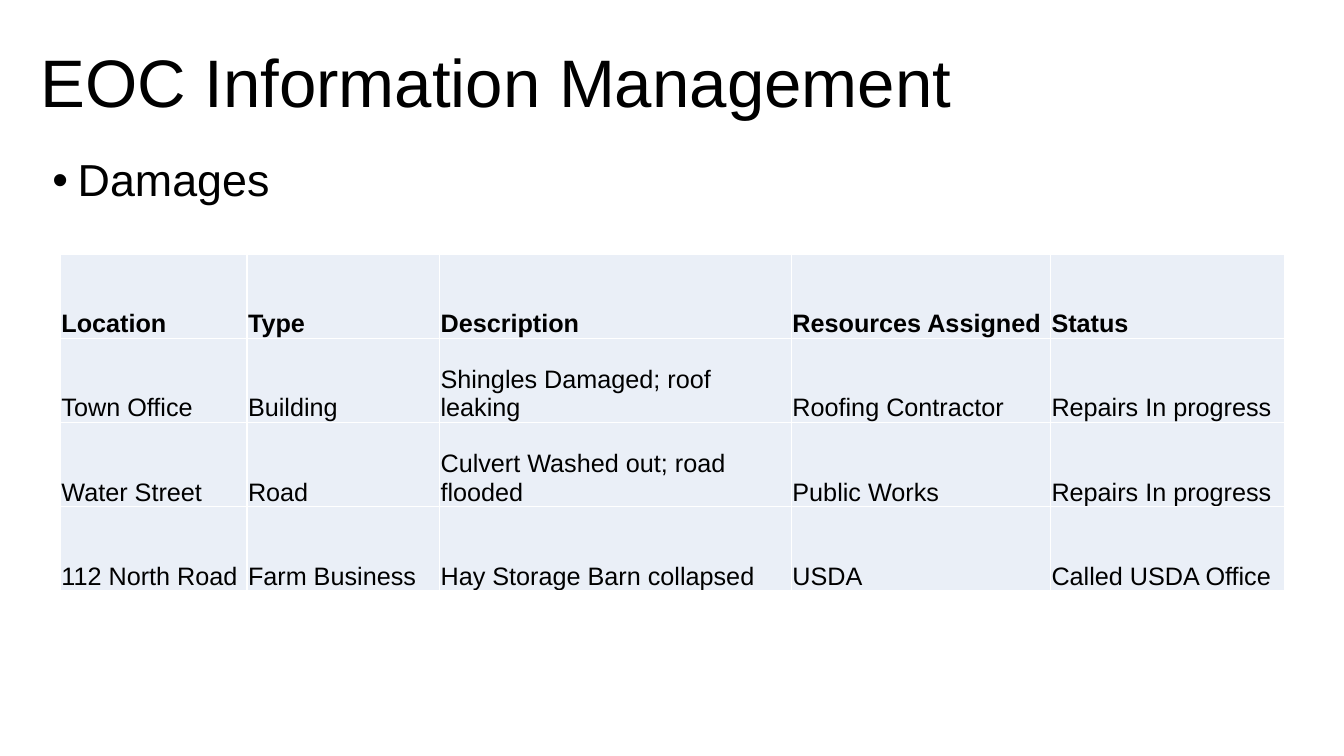
from lxml import etree
from pptx import Presentation
from pptx import util as u
from pptx.dml.color import RGBColor
from pptx.enum import text
from pptx.oxml import ns

WIDTH, HEIGHT = u.Inches(13.33), u.Inches(7.5)
FONT = "Arial"
BLACK = RGBColor(0x00, 0x00, 0x00)
WHITE = RGBColor(0xFF, 0xFF, 0xFF)
PALE_BLUE = RGBColor(0xEA, 0xEF, 0xF7)

COLUMNS = [1.85, 1.91, 3.49, 2.57, 2.32]
ROW_HEIGHT = 0.835
DAMAGES = [
    ["Location", "Type", "Description", "Resources Assigned", "Status"],
    ["Town Office", "Building", "Shingles Damaged; roof leaking",
     "Roofing Contractor", "Repairs In progress"],
    ["Water Street", "Road", "Culvert Washed out; road flooded",
     "Public Works", "Repairs In progress"],
    ["112 North Road", "Farm Business", "Hay Storage Barn collapsed",
     "USDA", "Called USDA Office"],
]


def add_run(p, words, size, bold=False):
    p.alignment = text.PP_ALIGN.LEFT
    r = p.add_run()
    r.text = words
    r.font.name, r.font.size, r.font.bold = FONT, u.Pt(size), bold
    r.font.color.rgb = BLACK


def fill_placeholder(sp, box, words, size, anchor):
    sp.left, sp.top, sp.width, sp.height = (u.Inches(n) for n in box)
    tf = sp.text_frame
    tf.word_wrap = True
    tf.auto_size = text.MSO_AUTO_SIZE.NONE
    tf.vertical_anchor = anchor
    p = tf.paragraphs[0]
    p.line_spacing, p.space_before = 0.9, u.Pt(0)
    add_run(p, words, size)
    return p


def add_bullet(p, indent):
    pPr = p._p.get_or_add_pPr()
    pPr.set("marL", str(u.Inches(indent)))
    pPr.set("indent", str(-u.Inches(indent)))
    etree.SubElement(pPr, ns.qn("a:buFont")).set("typeface", FONT)
    etree.SubElement(pPr, ns.qn("a:buChar")).set("char", "•")


def add_borders(cell, color, width):
    tcPr = cell._tc.get_or_add_tcPr()
    for i, side in enumerate(("a:lnL", "a:lnR", "a:lnT", "a:lnB")):
        ln = etree.Element(ns.qn(side), w=str(u.Pt(width)))
        fill = etree.SubElement(ln, ns.qn("a:solidFill"))
        etree.SubElement(fill, ns.qn("a:srgbClr")).set("val", str(color))
        tcPr.insert(i, ln)  # borders come before the cell fill


def format_cell(cell, words, bold):
    cell.fill.solid()
    cell.fill.fore_color.rgb = PALE_BLUE
    cell.vertical_anchor = text.MSO_ANCHOR.BOTTOM
    cell.margin_left = cell.margin_right = cell.margin_top = u.Inches(0.01)
    cell.margin_bottom = 0
    add_run(cell.text_frame.paragraphs[0], words, 18, bold)
    add_borders(cell, WHITE, 1)


def add_damage_table(s, left, top):
    frame = s.shapes.add_table(
        len(DAMAGES), len(COLUMNS), u.Inches(left), u.Inches(top),
        u.Inches(sum(COLUMNS)), u.Inches(ROW_HEIGHT * len(DAMAGES)))
    table = frame.table
    table.horz_banding = False
    for column, width in zip(table.columns, COLUMNS):
        column.width = u.Inches(width)
    for i, row in enumerate(DAMAGES):
        for j, words in enumerate(row):
            format_cell(table.cell(i, j), words, bold=i == 0)


def main():
    prs = Presentation()
    prs.slide_width, prs.slide_height = WIDTH, HEIGHT
    s = prs.slides.add_slide(prs.slide_layouts[1])

    # Title and topic
    fill_placeholder(s.shapes.title, (0.3, 0.32, 12.81, 1.06),
                     "EOC Information Management", 48, text.MSO_ANCHOR.MIDDLE)
    p = fill_placeholder(s.placeholders[1], (0.42, 1.52, 2.58, 0.85),
                         "Damages", 32, text.MSO_ANCHOR.TOP)
    add_bullet(p, 0.25)

    # Damage report
    add_damage_table(s, 0.6, 2.52)
    prs.save("out.pptx")


if __name__ == "__main__":
    main()
